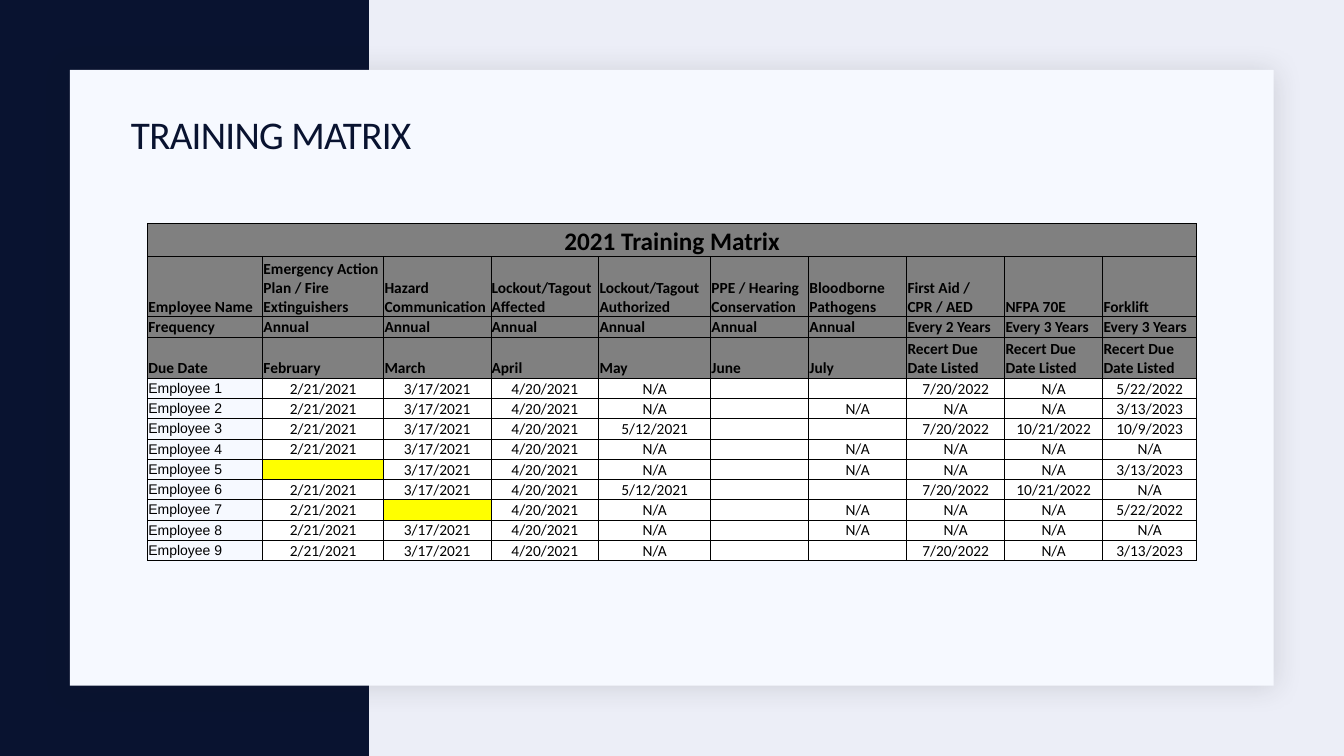
from lxml.etree import SubElement
from pptx import Presentation
from pptx.dml.color import RGBColor
from pptx.enum.shapes import MSO_SHAPE as Shape
from pptx.enum.text import MSO_ANCHOR as Anchor, PP_ALIGN as Align
from pptx.oxml.ns import qn
from pptx.util import Cm, Pt

COLORS = {
    "background": "ECEEF7", "navy": "091330", "card": "F6F9FF", "shadow": "1F2125",
    "header": "808080", "white": "FFFFFF", "overdue": "FFFF00", "black": "000000",
}
FORMATS = {
    "title": {"name": "Calibri", "size": Pt(28), "bold": False},
    "caption": {"name": "Calibri", "size": Pt(18), "bold": True},
    "header": {"name": "Calibri", "size": Pt(11), "bold": True},
    "employee": {"name": "Arial", "size": Pt(10), "bold": False},
    "date": {"name": "Calibri", "size": Pt(11), "bold": False},
}
CELL_FORMAT = {
    "margin_left": Cm(0.02), "margin_right": Cm(0.02),
    "margin_top": Cm(0.02), "margin_bottom": Cm(0),
}
COLUMN_WIDTHS = [2.9, 3.05, 2.7, 2.72, 2.82, 2.47, 2.47, 2.47, 2.47, 2.37]
HEADER_HEIGHTS = [0.84, 1.51, 0.51, 1.04]
EMPLOYEE_HEIGHT = 0.51
CAPTION = "2021 Training Matrix"
HEADERS = [
    ["Employee Name", "Emergency Action Plan / Fire Extinguishers", "Hazard Communication",
     "Lockout/Tagout Affected", "Lockout/Tagout Authorized", "PPE / Hearing Conservation",
     "Bloodborne Pathogens", "First Aid / CPR / AED", "NFPA 70E", "Forklift"],
    ["Frequency"] + ["Annual"] * 6 + ["Every 2 Years", "Every 3 Years", "Every 3 Years"],
    ["Due Date", "February", "March", "April", "May", "June", "July"]
    + ["Recert Due Date Listed"] * 3,
]
ACTION, HAZARD, LOCKOUT = "2/21/2021", "3/17/2021", "4/20/2021"
OVERDUE = None
RECORDS = [
    [ACTION, HAZARD, LOCKOUT, "N/A", "", "", "7/20/2022", "N/A", "5/22/2022"],
    [ACTION, HAZARD, LOCKOUT, "N/A", "", "N/A", "N/A", "N/A", "3/13/2023"],
    [ACTION, HAZARD, LOCKOUT, "5/12/2021", "", "", "7/20/2022", "10/21/2022", "10/9/2023"],
    [ACTION, HAZARD, LOCKOUT, "N/A", "", "N/A", "N/A", "N/A", "N/A"],
    [OVERDUE, HAZARD, LOCKOUT, "N/A", "", "N/A", "N/A", "N/A", "3/13/2023"],
    [ACTION, HAZARD, LOCKOUT, "5/12/2021", "", "", "7/20/2022", "10/21/2022", "N/A"],
    [ACTION, OVERDUE, LOCKOUT, "N/A", "", "N/A", "N/A", "N/A", "5/22/2022"],
    [ACTION, HAZARD, LOCKOUT, "N/A", "", "N/A", "N/A", "N/A", "N/A"],
    [ACTION, HAZARD, LOCKOUT, "N/A", "", "", "7/20/2022", "N/A", "3/13/2023"],
]


def color(name):
    """Return the named palette colour."""
    return RGBColor.from_string(COLORS[name])


def apply_format(target, values):
    """Set each attribute in values on the target."""
    for attribute, value in values.items():
        setattr(target, attribute, value)


def write_run(paragraph, text, style, color_name):
    """Add a formatted run to the paragraph."""
    run = paragraph.add_run()
    run.text = text
    apply_format(run.font, FORMATS[style])
    run.font.color.rgb = color(color_name)
    return run


def add_panel(slide, left, top, width, height, fill):
    """Draw a plain filled rectangle."""
    shape = slide.shapes.add_shape(Shape.RECTANGLE, Cm(left), Cm(top), Cm(width), Cm(height))
    shape.shadow.inherit = False
    shape.fill.solid()
    shape.fill.fore_color.rgb = color(fill)
    shape.line.fill.background()
    return shape


def add_card(slide, left, top, width, height):
    """Draw the content card with its soft shadow."""
    shape = add_panel(slide, left, top, width, height, "card")
    effects = shape.element.spPr.find(qn("a:effectLst"))
    shadow = SubElement(effects, qn("a:outerShdw"), blurRad=str(Pt(20)), dist=str(Pt(2)),
                        dir="2700000", algn="tl", rotWithShape="0")
    tint = SubElement(shadow, qn("a:srgbClr"), val=COLORS["shadow"])
    SubElement(tint, qn("a:alpha"), val="15000")


def add_title(slide, left, top, width, height, text):
    """Write the slide title."""
    frame = slide.shapes.add_textbox(Cm(left), Cm(top), Cm(width), Cm(height)).text_frame
    apply_format(frame, {"word_wrap": True, "vertical_anchor": Anchor.MIDDLE})
    paragraph = frame.paragraphs[0]
    paragraph.line_spacing = 0.9
    run = write_run(paragraph, text, "title", "navy")
    run.font._element.set("spc", "-50")


def add_borders(cell):
    """Outline the cell with thin black lines."""
    properties = cell._tc.get_or_add_tcPr()
    for side in ("L", "R", "T", "B"):
        line = SubElement(properties, qn(f"a:ln{side}"), w=str(Pt(0.5)))
        fill = SubElement(line, qn("a:solidFill"))
        SubElement(fill, qn("a:srgbClr"), val=COLORS["black"])


def fill_cell(cell, text, style, fill=None, align=Align.LEFT, anchor=Anchor.BOTTOM):
    """Format one cell and write its text."""
    apply_format(cell, {**CELL_FORMAT, "vertical_anchor": anchor})
    add_borders(cell)
    if fill:
        cell.fill.solid()
        cell.fill.fore_color.rgb = color(fill)
    else:
        cell.fill.background()
    paragraph = cell.text_frame.paragraphs[0]
    paragraph.alignment = align
    if text:
        write_run(paragraph, text, style, "black")
    else:
        size = str(int(FORMATS[style]["size"].pt * 100))
        SubElement(paragraph._p, qn("a:endParaRPr"), sz=size)


def add_matrix(slide, left, top):
    """Build the training table from its caption, headers and records."""
    heights = HEADER_HEIGHTS + [EMPLOYEE_HEIGHT] * len(RECORDS)
    table = slide.shapes.add_table(
        len(heights), len(COLUMN_WIDTHS), Cm(left), Cm(top),
        Cm(sum(COLUMN_WIDTHS)), Cm(sum(heights))).table
    apply_format(table, {"first_row": False, "horz_banding": False})
    for column, width in zip(table.columns, COLUMN_WIDTHS):
        column.width = Cm(width)
    for row, height in zip(table.rows, heights):
        row.height = Cm(height)
    table.cell(0, 0).merge(table.cell(0, len(COLUMN_WIDTHS) - 1))
    for index, cell in enumerate(table.rows[0].cells):
        fill_cell(cell, "" if index else CAPTION, "caption", "header", Align.CENTER)
    for row, texts in enumerate(HEADERS, 1):
        for column, text in enumerate(texts):
            fill_cell(table.cell(row, column), text, "header", "header")
    for number, record in enumerate(RECORDS, 1):
        row = len(HEADERS) + number
        fill_cell(table.cell(row, 0), f"Employee {number}", "employee", anchor=Anchor.MIDDLE)
        for column, text in enumerate(record, 1):
            fill = "overdue" if text is OVERDUE else "white"
            fill_cell(table.cell(row, column), text, "date", fill, Align.CENTER)


def main():
    """Build and save the training matrix slide."""
    presentation = Presentation()
    apply_format(presentation, {"slide_width": Cm(33.87), "slide_height": Cm(19.05)})
    slide = presentation.slides.add_slide(presentation.slide_layouts[6])
    slide.background.fill.solid()
    slide.background.fill.fore_color.rgb = color("background")
    add_panel(slide, 0, 0, 9.3, 19.05, "navy")
    add_card(slide, 1.76, 1.76, 30.34, 15.52)
    add_title(slide, 3.05, 2.62, 27.94, 1.63, "TRAINING MATRIX")
    add_matrix(slide, 3.72, 5.63)
    presentation.save("out.pptx")


if __name__ == "__main__":
    main()
